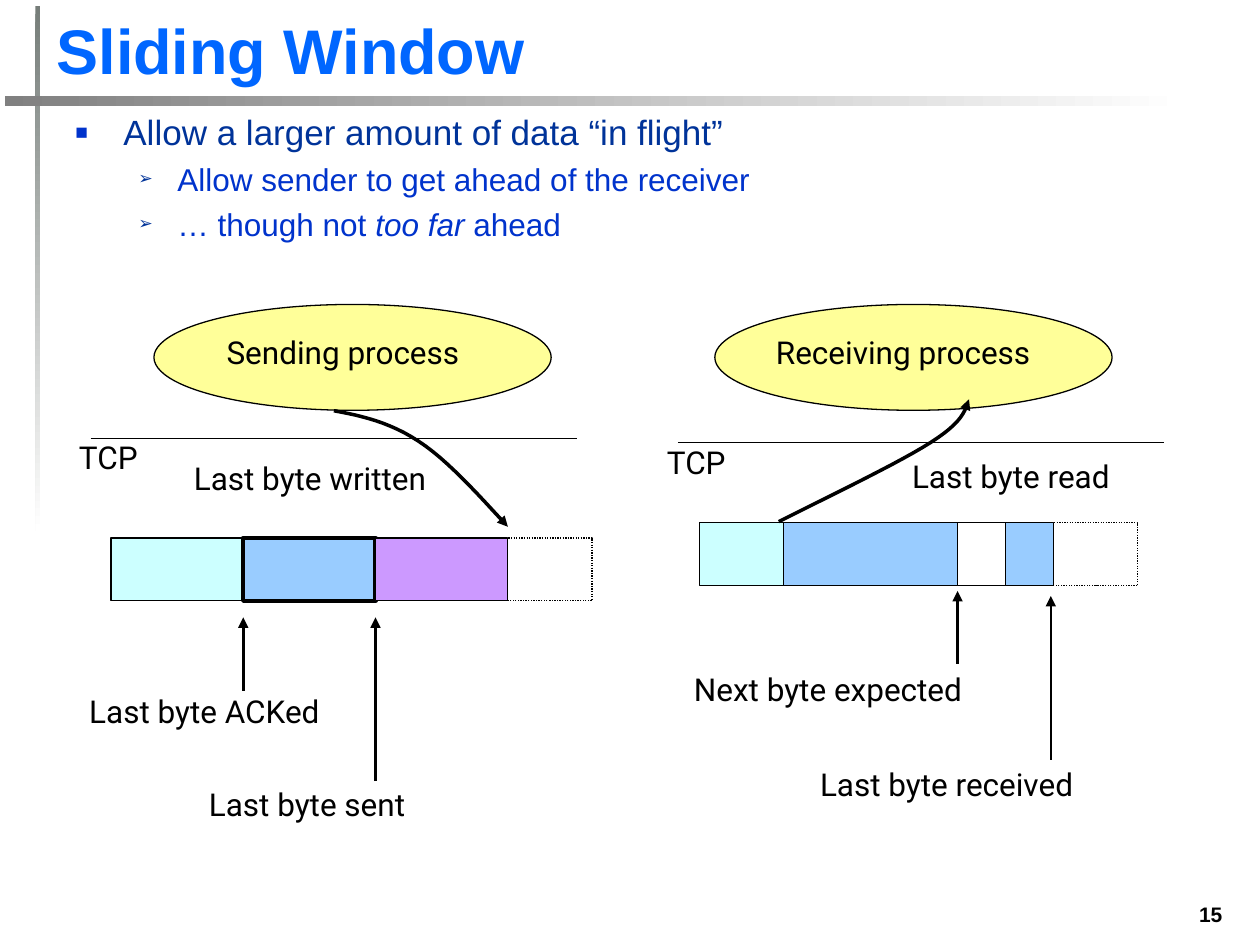
from lxml.etree import SubElement
from pptx import Presentation
from pptx.dml.color import RGBColor as Rgb
from pptx.enum.dml import MSO_LINE as Dash
from pptx.enum.shapes import MSO_CONNECTOR as Conn, MSO_SHAPE as Geo
from pptx.enum.text import MSO_ANCHOR as Anchor, MSO_AUTO_SIZE as Fit, PP_ALIGN as Align
from pptx.oxml.ns import qn
from pptx.util import Pt

HUES = {
    "black": "000000", "white": "FFFFFF", "gray": "808080", "moss": "767D79",
    "title": "0066FF", "navy": "003399", "blue": "0033CC", "yellow": "FFFF99",
    "aqua": "CCFFFF", "sky": "99CCFF", "violet": "CC99FF",
}

SENDER = {
    "oval": 50, "line": (13.8, 76.6),
    "cells": (25.4, 133.4, [("aqua", 75.6, 0.75), ("sky", 75.6, 2.5),
                            ("violet", 75.6, 0.75), (None, 48.2, 0.75)]),
    "curve": [(152.8, 60.7), (168.6, 63.6), (184.5, 67.2), (201, 78),
              (217.6, 88.8), (234.9, 108.2), (252.2, 127)],
    "arrows": [(101, 220.6, 178.8), (176.6, 272.4, 178.8)],
    "labels": [("Sending process", 84.4, 12.5, 161), ("TCP", 0, 73, 51),
               ("Last byte written", 65.7, 84.5, 159),
               ("Last byte ACKed", 5.9, 217.7, 159),
               ("Last byte sent", 74.3, 271, 137.5)],
}
RECEIVER = {
    "oval": 34.5, "line": (13.4, 78.7),
    "cells": (25.6, 124.8, [("aqua", 48.2, 0.75), ("sky", 99.4, 0.75),
                            ("white", 27.4, 0.75), ("sky", 27.4, 0.75),
                            (None, 48.2, 0.75)]),
    "curve": [(71, 124.1), (105.5, 106.8), (140.1, 90.2), (158.1, 78.7),
              (176.1, 67.2), (177.5, 60.7), (179.7, 54.2)],
    "arrows": [(173.2, 205.4, 163.7), (226.5, 260.2, 166.6)],
    "labels": [("Receiving process", 62.3, 12.5, 175), ("TCP", 0, 75.8, 51),
               ("Last byte read", 140.1, 83.8, 137.5),
               ("Next byte expected", 15.5, 205.4, 180),
               ("Last byte received", 87.5, 259.4, 173)],
}


def hue(name):
    """Return the named colour."""
    return Rgb.from_string(HUES[name])


def add_run(para, text, size, color, face="Arial", bold=False, slant=False):
    """Add one formatted run to a paragraph."""
    run = para.add_run()
    run.text = text
    font = run.font
    font.name, font.size, font.bold, font.italic = face, Pt(size), bold, slant
    font.color.rgb = hue(color)


def add_box(shapes, x, y, w, h):
    """Add a wrapping text box and return its frame."""
    frame = shapes.add_textbox(Pt(x), Pt(y), Pt(w), Pt(h)).text_frame
    frame.word_wrap = True
    return frame


def ink(shape, width, tip=False):
    """Draw a black outline, with an arrowhead at its end if asked."""
    shape.line.color.rgb = hue("black")
    shape.line.width = Pt(width)
    if tip:
        SubElement(shape.element.spPr.find(qn("a:ln")), qn("a:tailEnd"), type="triangle")


def add_form(shapes, geo, x, y, w, h, fill, width=0.75):
    """Add an outlined shape, unfilled when no fill is named."""
    form = shapes.add_shape(geo, Pt(x), Pt(y), Pt(w), Pt(h))
    form.shadow.inherit = False
    ink(form, width)
    if fill:
        form.fill.solid()
        form.fill.fore_color.rgb = hue(fill)
    else:
        form.fill.background()
    return form


def add_line(shapes, start, end, width, tip=False):
    """Add a straight line without a shadow."""
    line = shapes.add_connector(Conn.STRAIGHT, *(Pt(v) for v in (*start, *end)))
    ink(line, width, tip)
    SubElement(line.element.spPr, qn("a:effectLst"))


def add_curve(shapes, x, y, knots):
    """Trace joined cubic curves through the knots, ending in an arrowhead."""
    steps = 12
    dots = [knots[0]]
    for k in range(0, len(knots) - 1, 3):
        part = knots[k:k + 4]
        for n in range(1, steps + 1):
            t = n / steps
            mix = ((1 - t) ** 3, 3 * t * (1 - t) ** 2, 3 * t * t * (1 - t), t ** 3)
            dots.append(tuple(sum(m * p[i] for m, p in zip(mix, part)) for i in (0, 1)))
    dots = [(Pt(x + a), Pt(y + b)) for a, b in dots]
    pen = shapes.build_freeform(*dots[0])
    pen.add_line_segments(dots[1:], close=False)
    curve = pen.convert_to_shape()
    curve.shadow.inherit = False
    curve.fill.background()
    ink(curve, 2, True)


def add_bar(shapes, x, y, w, h, color, angle):
    """Add a bar that fades to white."""
    bar = shapes.add_shape(Geo.RECTANGLE, Pt(x), Pt(y), Pt(w), Pt(h))
    bar.shadow.inherit = False
    bar.line.fill.background()
    bar.fill.gradient()
    bar.fill.gradient_angle = angle
    for stop, name in zip(bar.fill.gradient_stops, (color, "white")):
        stop.color.rgb = hue(name)


def add_head(shapes, x, y, w, h):
    """Place the title with its two crossing bars."""
    add_bar(shapes, x - 5, y + 1.4, 2.9, 300, "moss", 270)
    add_bar(shapes, x - 22.3, y + 52.5, w, 5.8, "gray", 0)
    title = shapes.title
    title.left, title.top, title.width, title.height = Pt(x), Pt(y), Pt(w), Pt(h)
    frame = title.text_frame
    frame.auto_size = Fit.NONE
    frame.vertical_anchor = Anchor.BOTTOM
    para = frame.paragraphs[0]
    para.alignment = Align.LEFT
    add_run(para, "Sliding Window", 36, "title", bold=True)


def add_list(shapes, x, y, w, h):
    """Place the bulleted list."""
    top = (0, 27.4, 27.4, "■", "blue", 60, 20, "navy")
    sub = (1, 58.3, 22.3, "➢", "navy", 55, 18, "blue")
    rows = [
        (top, ["Allow a larger amount of data “in flight”"]),
        (sub, ["Allow sender to get ahead of the receiver"]),
        (sub, ["… though not ", "too far", " ahead"]),
    ]
    frame = add_box(shapes, x, y, w, h)
    for i, (style, parts) in enumerate(rows):
        level, left, hang, mark, tint, scale, size, color = style
        para = frame.add_paragraph() if i else frame.paragraphs[0]
        para.level = level
        para.space_before = Pt(size * 0.23)
        props = para._p.get_or_add_pPr()
        props.set("marL", str(Pt(left)))
        props.set("indent", str(-Pt(hang)))
        SubElement(SubElement(props, qn("a:buClr")), qn("a:srgbClr"), val=HUES[tint])
        SubElement(props, qn("a:buSzPct"), val=str(scale * 1000))
        SubElement(props, qn("a:buFont"), typeface="Arial")
        SubElement(props, qn("a:buChar"), char=mark)
        for text in parts:
            add_run(para, text, size, color, slant=text == "too far")


def add_side(shapes, x, y, side):
    """Draw one end of the link: process, buffer, pointers and labels."""
    add_form(shapes, Geo.OVAL, x + side["oval"], y, 227, 60.5, "yellow")
    left, drop = side["line"]
    add_line(shapes, (x + left, y + drop), (x + left + 278, y + drop), 0.75)
    left, drop, cells = side["cells"]
    for fill, wide, edge in cells:
        cell = add_form(shapes, Geo.RECTANGLE, x + left, y + drop, wide, 36, fill, edge)
        if not fill:
            cell.line.dash_style = Dash.ROUND_DOT
        left += wide
    add_curve(shapes, x, y, side["curve"])
    for at, low, high in side["arrows"]:
        add_line(shapes, (x + at, y + low), (x + at, y + high), 1.5, True)
    for text, left, drop, wide in side["labels"]:
        frame = add_box(shapes, x + left, y + drop, wide, 28.8)
        add_run(frame.paragraphs[0], text, 18, "black", "Roboto")


def add_page(shapes, x, y, w, h):
    """Place the page number."""
    para = add_box(shapes, x, y, w, h).paragraphs[0]
    para.alignment = Align.RIGHT
    add_run(para, "15", 12, "black", bold=True)


def main():
    """Build and save the slide."""
    deck = Presentation()
    deck.slide_width, deck.slide_height = Pt(720), Pt(540)
    shapes = deck.slides.add_slide(deck.slide_layouts[5]).shapes
    add_head(shapes, 25.2, 2.2, 674.6, 51.1)
    add_list(shapes, 36, 59.8, 666, 122.4)
    add_side(shapes, 38, 174, SENDER)
    add_side(shapes, 374, 174, RECEIVER)
    add_page(shapes, 660.2, 511.9, 45.4, 21.6)
    deck.save("out.pptx")


if __name__ == "__main__":
    main()
